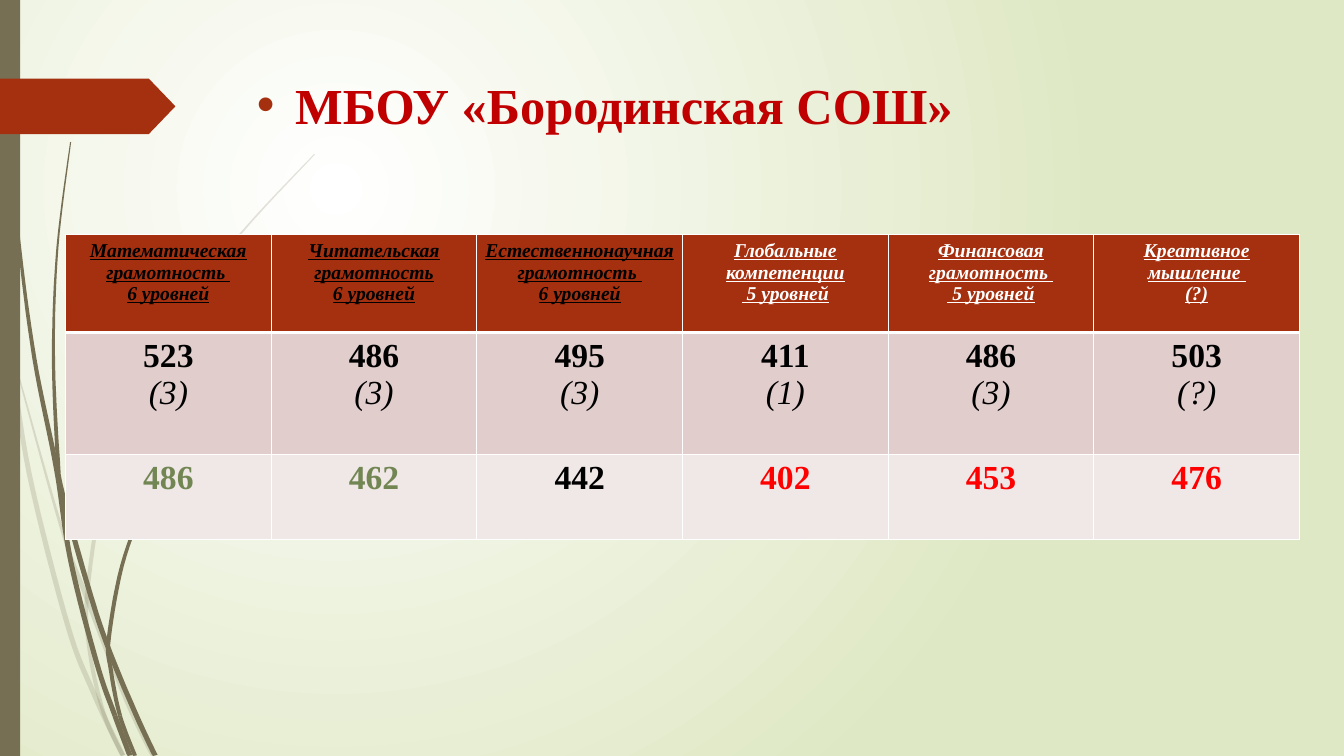
import math

import lxml.etree
import pptx
import pptx.dml.color
import pptx.enum.shapes
import pptx.enum.text
import pptx.oxml.ns
import pptx.util

WIDTH, HEIGHT = 13.33, 7.5
FONT = "Times New Roman"
UNITS_PER_INCH = 1000
COLORS = {
    "white": "FFFFFF", "meadow": "DFE8C4", "stem": "766F54", "rust": "A53010",
    "title": "C00000", "black": "000000", "green": "728653", "red": "FF0000",
    "rose": "E1CDCC", "pale": "F0E8E7",
}
# Grass blades: start width, end width, heights of the joints, centre line
PALE_BLADES = [
    (0.04, 0.05, [3.5, 6.9], [(0, 2.9), (0.1, 3.47), (0.29, 4.7), (0.67, 6.2),
                              (0.93, 6.88), (1.22, 7.5)]),
    (0.01, 0.05, [5.93], [(0.15, 3.6), (0.6, 5.21), (0.86, 5.93), (1.25, 6.93), (1.52, 7.5)]),
    (0.01, 0.04, [5.84, 6.9], [(3.12, 1.53), (2.28, 2.45), (1.59, 3.49), (1.09, 4.62),
                               (0.87, 5.84), (0.89, 6.46), (1.03, 7.08), (1.22, 7.5)]),
]
DARK_BLADES = [
    (0.01, 0.05, [4.65, 7.1], [(0.04, 0), (0.07, 1.1), (0.18, 2.33), (0.34, 3.55), (0.56, 4.65),
                               (0.7, 5.56), (0.96, 6.58), (1.14, 7.1), (1.29, 7.5)]),
    (0.01, 0.05, [4.7, 6.4], [(0.7, 1.41), (0.57, 2.45), (0.53, 3.49), (0.57, 4.5), (0.62, 4.9),
                              (0.9, 5.91), (1.09, 6.47), (1.34, 7.07), (1.54, 7.5)]),
    (0.01, 0.04, [6.33, 7.1], [(2.6, 3.44), (2.05, 4.05), (1.57, 4.75), (1.24, 5.51),
                               (1.08, 6.33), (1.1, 6.65), (1.19, 7.1), (1.34, 7.5)]),
]
# Header lines, header colour, score, level, lower score, lower score colour
SUBJECTS = [
    ("Математическая грамотность \n6 уровней", "black", "523", "(3)", "486", "green"),
    ("Читательская грамотность\n6 уровней", "black", "486", "(3)", "462", "green"),
    ("Естественнонаучная грамотность \n6 уровней", "black", "495", "(3)", "442", "black"),
    ("Глобальные компетенции\n 5 уровней", "white", "411", "(1)", "402", "red"),
    ("Финансовая грамотность \n 5 уровней", "white", "486", "(3)", "453", "red"),
    ("Креативное мышление \n(?)", "white", "503", "(?)", "476", "red"),
]


def rgb(name):
    return pptx.dml.color.RGBColor.from_string(COLORS[name])


def inches(*lengths):
    return [pptx.util.Inches(length) for length in lengths]


def add_xml(parent, tag, **attributes):
    element = lxml.etree.SubElement(parent, pptx.oxml.ns.qn(tag))
    for key, value in attributes.items():
        element.set(key, str(value))
    return element


def paint(shape, color):
    shape.shadow.inherit = False
    shape.fill.solid()
    shape.fill.fore_color.rgb = rgb(color)
    shape.line.fill.background()


def format_runs(paragraph, size, color, bold=False, italic=False, underline=False):
    for run in paragraph.runs:
        font = run.font
        font.name, font.size, font.color.rgb = FONT, pptx.util.Pt(size), rgb(color)
        font.bold, font.italic, font.underline = bold, italic, underline


def set_background(slide):
    fill = slide.background.fill
    fill.gradient()
    for stop, color, position in zip(fill.gradient_stops, ("white", "meadow"), (0, 1)):
        stop.color.rgb, stop.position = rgb(color), position
    gradient = slide.element.find(".//" + pptx.oxml.ns.qn("a:gradFill"))
    gradient.remove(gradient.find(pptx.oxml.ns.qn("a:lin")))
    radial = add_xml(gradient, "a:path", path="circle")
    add_xml(radial, "a:fillToRect", l=50000, t=50000, r=100000, b=100000)


def smooth_curve(points, steps=8):
    """Sample a Catmull-Rom curve through the points."""
    padded = [points[0], *points, points[-1]]
    curve = []
    for a, b, c, d in zip(padded, padded[1:], padded[2:], padded[3:]):
        for step in range(steps):
            t = step / steps
            curve.append(tuple(
                q + t * (r - p) / 2 + t ** 2 * (2 * p - 5 * q + 4 * r - s) / 2
                + t ** 3 * (3 * q - p - 3 * r + s) / 2
                for p, q, r, s in zip(a, b, c, d)))
    return curve + [points[-1]]


def edge_point(x, y):
    return max(x, 0) * UNITS_PER_INCH, min(max(y, 0), HEIGHT) * UNITS_PER_INCH


def add_blade(slide, start_width, end_width, joints, points, opacity):
    curve = smooth_curve(points)
    last = len(curve) - 1
    left, right = [], []
    for index, (x, y) in enumerate(curve):
        before, after = curve[max(index - 1, 0)], curve[min(index + 1, last)]
        dx, dy = after[0] - before[0], after[1] - before[1]
        share = min(1, 2 * index / last)
        half = (start_width + (end_width - start_width) * share) / 2 / math.hypot(dx, dy)
        left.append(edge_point(x - dy * half, y + dx * half))
        right.append(edge_point(x + dy * half, y - dx * half))
    cuts = [next(i for i, (x, y) in enumerate(curve) if y >= joint) for joint in joints]
    for first, end in zip([0, *cuts], [*cuts, last]):
        outline = left[first:end + 1] + right[first:end + 1][::-1]
        builder = slide.shapes.build_freeform(
            *outline[0], scale=pptx.util.Inches(1) / UNITS_PER_INCH)
        builder.add_line_segments(outline[1:], close=True)
        piece = builder.convert_to_shape()
        paint(piece, "stem")
        if opacity < 100:
            color = piece.element.find(".//" + pptx.oxml.ns.qn("a:srgbClr"))
            add_xml(color, "a:alpha", val=opacity * 1000)


def add_side_decoration(slide):
    for blades, opacity in ((PALE_BLADES, 20), (DARK_BLADES, 100)):
        for blade in blades:
            add_blade(slide, *blade, opacity)
    # Side bar and arrow tab
    kinds = pptx.enum.shapes.MSO_SHAPE
    bar = slide.shapes.add_shape(kinds.RECTANGLE, *inches(0, 0, 0.2, HEIGHT))
    paint(bar, "stem")
    tab = slide.shapes.add_shape(kinds.PENTAGON, *inches(0, 0.78, 1.74, 0.55))
    tab.adjustments[0] = 0.48
    paint(tab, "rust")


def add_title(slide, left, top, width, height):
    frame = slide.shapes.add_textbox(*inches(left, top, width, height)).text_frame
    frame.word_wrap = True
    frame.vertical_anchor = pptx.enum.text.MSO_ANCHOR.MIDDLE
    frame.margin_bottom = pptx.util.Inches(0.16)
    paragraph = frame.paragraphs[0]
    paragraph.text = "МБОУ «Бородинская СОШ»"
    format_runs(paragraph, 36, "title", bold=True)
    properties = paragraph._p.get_or_add_pPr()
    indent = pptx.util.Inches(0.38)
    properties.set("marL", str(indent))
    properties.set("indent", str(-indent))
    add_xml(add_xml(properties, "a:buClr"), "a:srgbClr", val=COLORS["rust"])
    add_xml(properties, "a:buFont", typeface="Arial")
    add_xml(properties, "a:buChar", char="•")


def add_borders(cell, bottom=1, top=1):
    properties = cell._tc.get_or_add_tcPr()
    for index, (side, weight) in enumerate(zip("LRTB", (1, 1, top, bottom))):
        line = lxml.etree.Element(pptx.oxml.ns.qn(f"a:ln{side}"))
        line.set("w", str(pptx.util.Pt(weight)))
        add_xml(add_xml(line, "a:solidFill"), "a:srgbClr", val=COLORS["white"])
        properties.insert(index, line)


def fill_cell(cell, text, fill, styles, **borders):
    cell.fill.solid()
    cell.fill.fore_color.rgb = rgb(fill)
    cell.margin_left = cell.margin_right = pptx.util.Inches(0.08)
    cell.text_frame.text = text
    for paragraph, style in zip(cell.text_frame.paragraphs, styles):
        paragraph.alignment = pptx.enum.text.PP_ALIGN.CENTER
        format_runs(paragraph, **style)
    add_borders(cell, **borders)


def add_score_table(slide, left, top, width, row_heights):
    table = slide.shapes.add_table(len(row_heights), len(SUBJECTS),
                                   *inches(left, top, width, sum(row_heights))).table
    for row, height in zip(table.rows, row_heights):
        row.height = pptx.util.Inches(height)
    for column, (header, ink, score, level, lower, lower_ink) in enumerate(SUBJECTS):
        heading = dict(size=14, color=ink, bold=True, italic=True, underline=True)
        number = dict(size=24, color="black", bold=True)
        note = dict(size=24, color="black", italic=True)
        fill_cell(table.cell(0, column), header, "rust", [heading] * 2, bottom=3)
        fill_cell(table.cell(1, column), f"{score}\n{level}", "rose", [number, note], top=3)
        fill_cell(table.cell(2, column), lower, "pale", [dict(number, color=lower_ink)])


def main():
    presentation = pptx.Presentation()
    presentation.slide_width, presentation.slide_height = inches(WIDTH, HEIGHT)
    slide = presentation.slides.add_slide(presentation.slide_layouts[6])
    set_background(slide)
    add_side_decoration(slide)
    add_title(slide, 2.45, 0.68, 10.13, 0.82)
    add_score_table(slide, 0.65, 2.33, 12.24, (0.97, 1.21, 0.84))
    presentation.save("out.pptx")


if __name__ == "__main__":
    main()
